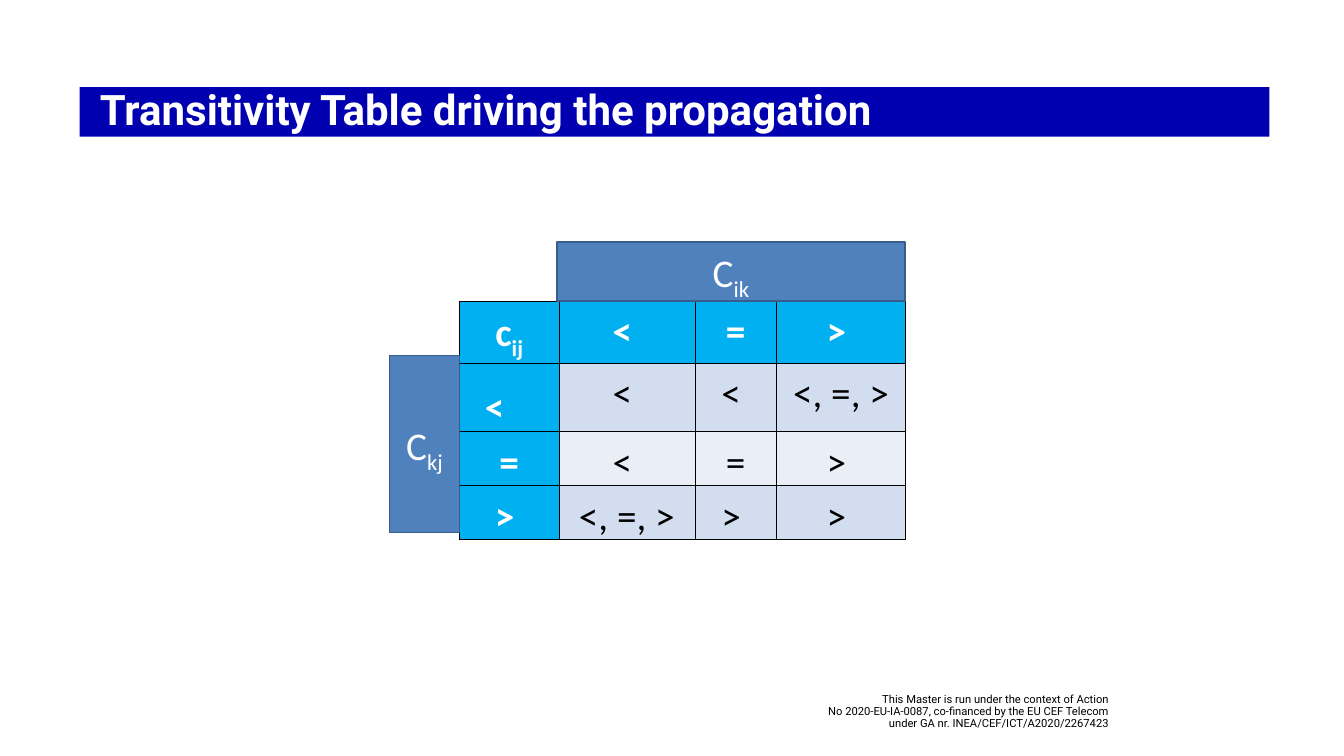
import pptx
import pptx.dml.color
import pptx.enum.shapes
import pptx.enum.text
import pptx.oxml
import pptx.oxml.ns
import pptx.util

Inches = pptx.util.Inches
Pt = pptx.util.Pt
ALIGN = pptx.enum.text.PP_ALIGN
MIDDLE = pptx.enum.text.MSO_ANCHOR.MIDDLE

COLORS = {
    "title bar": "0000B0",
    "label": "4F81BD",
    "label edge": "385D8A",
    "header": "00B0F0",
    "odd row": "D2DEEF",
    "even row": "EAEFF7",
    "light": "FFFFFF",
    "dark": "000000",
}

# Each entry is text, or a (base, subscript) pair
RELATIONS = [
    [("c", "ij"), "<", "=", ">"],
    ["<", "<", "<", "<, =, >"],
    ["=", "<", "=", ">"],
    [">", "<, =, >", ">", ">"],
]
COLUMN_WIDTHS = [1.97, 2.7, 1.62, 2.56]
ROW_HEIGHTS = [1.07, 1.36, 1.07, 1.07]

FUNDING_LINES = [
    "This Master is run under the context of Action",
    "No 2020-EU-IA-0087, co-financed by the EU CEF Telecom",
    "under GA nr. INEA/CEF/ICT/A2020/2267423",
]

SYMBOL_FONT = {"name": "Calibri", "size": Pt(56)}


def rgb(role):
    return pptx.dml.color.RGBColor.from_string(COLORS[role])


def apply_format(target, values):
    for name, value in values.items():
        setattr(target, name, value)


def fill_solid(target, role):
    target.fill.solid()
    target.fill.fore_color.rgb = rgb(role)


def write_symbol(paragraph, symbol, role, bold=False):
    """Write a symbol, with its subscript if it is a pair."""
    parts = symbol if isinstance(symbol, tuple) else (symbol,)
    for position, part in enumerate(parts):
        run = paragraph.add_run()
        run.text = part
        apply_format(run.font, {**SYMBOL_FONT, "bold": bold})
        run.font.color.rgb = rgb(role)
        if position:
            run.font._element.set("baseline", "-25000")


def add_title(slide, text):
    title = slide.shapes.title
    apply_format(title, {"left": Inches(1.58), "top": Inches(1.73),
                         "width": Inches(23.61), "height": Inches(0.98)})
    fill_solid(title, "title bar")
    frame = title.text_frame
    frame.text = text
    apply_format(frame, {
        "auto_size": pptx.enum.text.MSO_AUTO_SIZE.NONE,
        "word_wrap": True,
        "vertical_anchor": MIDDLE,
        "margin_left": Inches(0.4),
        "margin_right": Inches(0.1),
        "margin_top": Inches(0.05),
        "margin_bottom": Inches(0.05),
    })
    heading = frame.paragraphs[0]
    apply_format(heading, {"alignment": ALIGN.LEFT, "line_spacing": 0.9,
                           "space_before": Pt(0)})
    apply_format(heading.runs[0].font, {"name": "Roboto", "size": Pt(60), "bold": True})
    heading.runs[0].font.color.rgb = rgb("light")


def add_axis_label(slide, symbol, left, top, width, height):
    label = slide.shapes.add_shape(
        pptx.enum.shapes.MSO_SHAPE.RECTANGLE,
        Inches(left), Inches(top), Inches(width), Inches(height))
    label.shadow.inherit = False
    fill_solid(label, "label")
    label.line.color.rgb = rgb("label edge")
    label.line.width = Pt(2)
    label.text_frame.vertical_anchor = MIDDLE
    paragraph = label.text_frame.paragraphs[0]
    apply_format(paragraph, {"alignment": ALIGN.CENTER, "line_spacing": 1.15,
                             "space_after": Pt(20)})
    write_symbol(paragraph, symbol, "light")


def add_borders(cell):
    properties = cell._tc.get_or_add_tcPr()
    for position, side in enumerate(("lnL", "lnR", "lnT", "lnB")):
        border = pptx.oxml.parse_xml(
            f'<a:{side} {pptx.oxml.ns.nsdecls("a")} w="12700"><a:solidFill>'
            f'<a:srgbClr val="{COLORS["dark"]}"/></a:solidFill></a:{side}>')
        properties.insert(position, border)


def add_relation_table(slide):
    table = slide.shapes.add_table(
        len(ROW_HEIGHTS), len(COLUMN_WIDTHS), Inches(9.12), Inches(5.98),
        Inches(sum(COLUMN_WIDTHS)), Inches(sum(ROW_HEIGHTS))).table
    apply_format(table, {"first_row": False, "horz_banding": False})
    for column, width in zip(table.columns, COLUMN_WIDTHS):
        column.width = Inches(width)
    for row, height in zip(table.rows, ROW_HEIGHTS):
        row.height = Inches(height)

    for r, symbols in enumerate(RELATIONS):
        for c, symbol in enumerate(symbols):
            cell = table.cell(r, c)
            header = r == 0 or c == 0
            fill_solid(cell, "header" if header else "odd row" if r % 2 else "even row")
            # Lone inequality signs sit slightly left of centre
            right = 0.33 if symbol in ("<", ">") else 0.15
            margins = {"margin_left": Inches(0.15), "margin_right": Inches(right),
                       "margin_top": 0, "margin_bottom": 0}
            layout = {"alignment": ALIGN.CENTER, "line_spacing": 1.15}
            # The first row header is lowered and indented
            if (r, c) == (1, 0):
                margins.update(margin_left=Inches(0.5), margin_top=Inches(0.42))
                layout = {"alignment": ALIGN.LEFT, "line_spacing": 1.0}
            apply_format(cell, margins)
            paragraph = cell.text_frame.paragraphs[0]
            apply_format(paragraph, layout)
            write_symbol(paragraph, symbol, "light" if header else "dark", header)
            add_borders(cell)


def add_funding_note(slide):
    note = slide.shapes.add_textbox(
        Inches(15.02), Inches(13.74), Inches(7.08), Inches(0.76))
    apply_format(note.text_frame, {"word_wrap": True, "vertical_anchor": MIDDLE,
                                   "margin_top": 0, "margin_bottom": 0})
    paragraph = note.text_frame.paragraphs[0]
    apply_format(paragraph, {"alignment": ALIGN.RIGHT, "line_spacing": 0.9})
    for number, line in enumerate(FUNDING_LINES):
        if number:
            paragraph.add_line_break()
        run = paragraph.add_run()
        run.text = line
        apply_format(run.font, {"name": "Roboto", "size": Pt(16)})
        run.font.color.rgb = rgb("dark")


def main():
    deck = pptx.Presentation()
    apply_format(deck, {"slide_width": Inches(26.67), "slide_height": Inches(15)})
    slide = deck.slides.add_slide(deck.slide_layouts.get_by_name("Title Only"))

    add_funding_note(slide)
    add_relation_table(slide)
    # Labels for the row and column relations
    add_axis_label(slide, ("C", "kj"), 7.73, 7.05, 1.39, 3.52)
    add_axis_label(slide, ("C", "ik"), 11.05, 4.8, 6.91, 1.17)
    add_title(slide, "Transitivity Table driving the propagation")

    deck.save("out.pptx")


if __name__ == "__main__":
    main()
